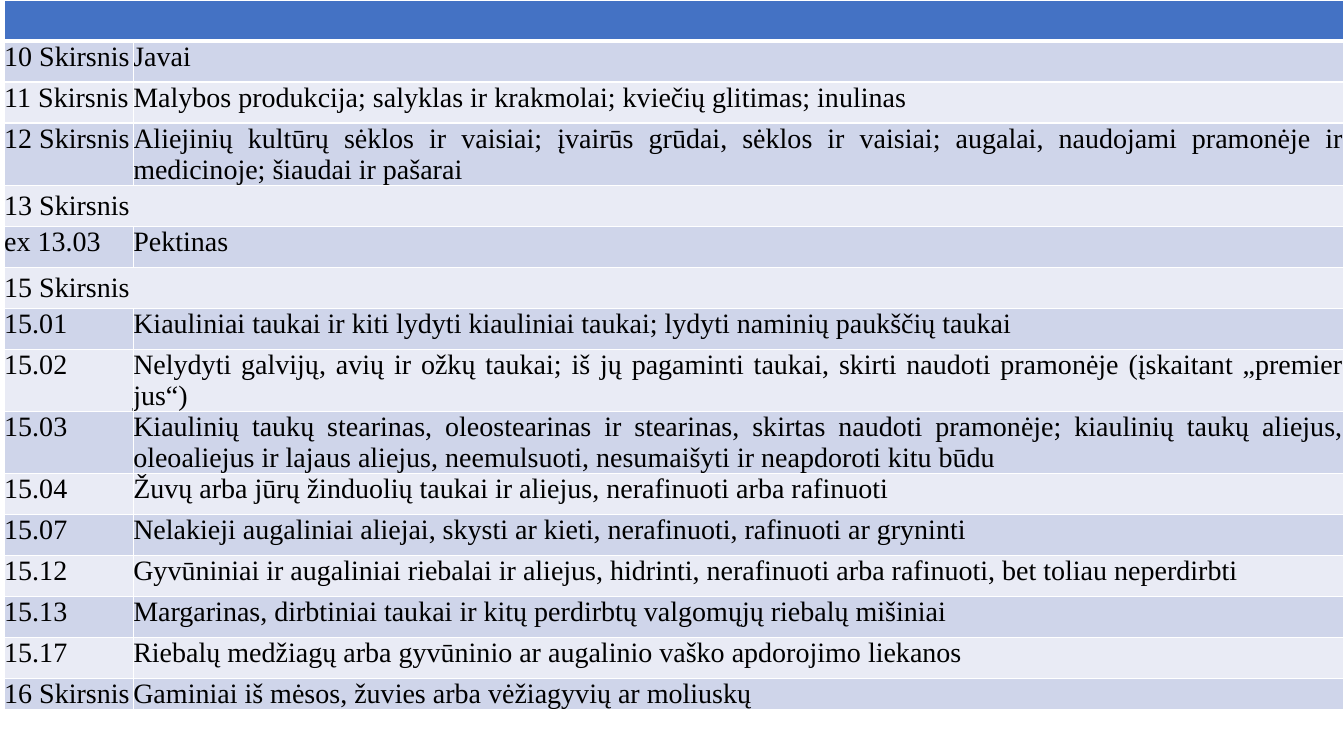
from dataclasses import dataclass

from lxml.etree import SubElement
from pptx import Presentation
from pptx.dml.color import RGBColor
from pptx.enum.text import MSO_ANCHOR, PP_ALIGN
from pptx.oxml.ns import qn
from pptx.table import Table, _Cell
from pptx.util import Pt

HEADER_BLUE = RGBColor(0x44, 0x72, 0xC4)
BAND_DARK = RGBColor(0xCF, 0xD5, 0xEA)
BAND_LIGHT = RGBColor(0xE9, 0xEB, 0xF5)
WHITE = RGBColor(0xFF, 0xFF, 0xFF)
BLACK = RGBColor(0, 0, 0)

CODE_WIDTH, PRODUCT_WIDTH = 92.2, 864.7
ROW_HEIGHT, LAST_ROW_HEIGHT = 29.3, 3.6
THIN, THICK = 1, 3


@dataclass
class Entry:
    code: str
    product: str = ""  # an entry without a product spans both columns


ENTRIES = [
    Entry("10 Skirsnis", "Javai"),
    Entry("11 Skirsnis", "Malybos produkcija; salyklas ir krakmolai; kviečių glitimas; inulinas"),
    Entry("12 Skirsnis", "Aliejinių kultūrų sėklos ir vaisiai; įvairūs grūdai, sėklos ir vaisiai; "
          "augalai, naudojami pramonėje ir medicinoje; šiaudai ir pašarai"),
    Entry("13 Skirsnis"),
    Entry("ex 13.03", "Pektinas"),
    Entry("15 Skirsnis"),
    Entry("15.01", "Kiauliniai taukai ir kiti lydyti kiauliniai taukai; lydyti naminių paukščių taukai"),
    Entry("15.02", "Nelydyti galvijų, avių ir ožkų taukai; iš jų pagaminti taukai, "
          "skirti naudoti pramonėje (įskaitant „premier jus“)"),
    Entry("15.03", "Kiaulinių taukų stearinas, oleostearinas ir stearinas, skirtas naudoti pramonėje; "
          "kiaulinių taukų aliejus, oleoaliejus ir lajaus aliejus, neemulsuoti, "
          "nesumaišyti ir neapdoroti kitu būdu"),
    Entry("15.04", "Žuvų arba jūrų žinduolių taukai ir aliejus, nerafinuoti arba rafinuoti"),
    Entry("15.07", "Nelakieji augaliniai aliejai, skysti ar kieti, nerafinuoti, rafinuoti ar gryninti"),
    Entry("15.12", "Gyvūniniai ir augaliniai riebalai ir aliejus, hidrinti, nerafinuoti arba rafinuoti, "
          "bet toliau neperdirbti"),
    Entry("15.13", "Margarinas, dirbtiniai taukai ir kitų perdirbtų valgomųjų riebalų mišiniai"),
    Entry("15.17", "Riebalų medžiagų arba gyvūninio ar augalinio vaško apdorojimo liekanos"),
    Entry("16 Skirsnis", "Gaminiai iš mėsos, žuvies arba vėžiagyvių ar moliuskų"),
]


def style_cell(cell: _Cell, fill: RGBColor, top: float = THIN, bottom: float = THIN) -> None:
    """Set the insets, white borders and fill of a cell."""
    cell.margin_left = cell.margin_right = cell.margin_top = cell.margin_bottom = Pt(0)
    properties = cell._tc.get_or_add_tcPr()
    for side, width in (("L", THIN), ("R", THIN), ("T", top), ("B", bottom)):
        border = SubElement(properties, qn(f"a:ln{side}"), w=str(Pt(width)))
        border_fill = SubElement(border, qn("a:solidFill"))
        SubElement(border_fill, qn("a:srgbClr"), val=str(WHITE))
    cell.fill.solid()
    cell.fill.fore_color.rgb = fill


def write_cell(cell: _Cell, text: str) -> None:
    """Write justified black text."""
    paragraph = cell.text_frame.paragraphs[0]
    paragraph.text = text
    paragraph.alignment = PP_ALIGN.JUSTIFY
    paragraph.font.name = "Times New Roman"
    paragraph.font.size = Pt(20)
    paragraph.font.color.rgb = BLACK


def fill_entry(products: Table, row: int, entry: Entry) -> None:
    """Fill one banded row of the table."""
    code, product = products.cell(row, 0), products.cell(row, 1)
    for cell in (code, product):
        style_cell(cell, BAND_DARK if row % 2 else BAND_LIGHT, top=THICK if row == 1 else THIN)
    write_cell(code, entry.code)
    if entry.product:
        write_cell(product, entry.product)
    else:
        code.merge(product)
        code.vertical_anchor = MSO_ANCHOR.MIDDLE


def main() -> None:
    presentation = Presentation()
    presentation.slide_width, presentation.slide_height = Pt(960), Pt(540)
    slide = presentation.slides.add_slide(presentation.slide_layouts[6])

    # Table grid
    row_count = len(ENTRIES) + 1
    products = slide.shapes.add_table(
        row_count, 2, Pt(3), Pt(0), Pt(CODE_WIDTH + PRODUCT_WIDTH), Pt(ROW_HEIGHT * row_count)
    ).table
    products.columns[0].width = Pt(CODE_WIDTH)
    products.columns[1].width = Pt(PRODUCT_WIDTH)
    for table_row in products.rows:
        table_row.height = Pt(ROW_HEIGHT)
    products.rows[row_count - 1].height = Pt(LAST_ROW_HEIGHT)

    # Empty header band
    for column in range(2):
        style_cell(products.cell(0, column), HEADER_BLUE, bottom=THICK)
    products.cell(0, 0).merge(products.cell(0, 1))

    # Product entries
    for row, entry in enumerate(ENTRIES, start=1):
        fill_entry(products, row, entry)

    presentation.save("out.pptx")


if __name__ == "__main__":
    main()
